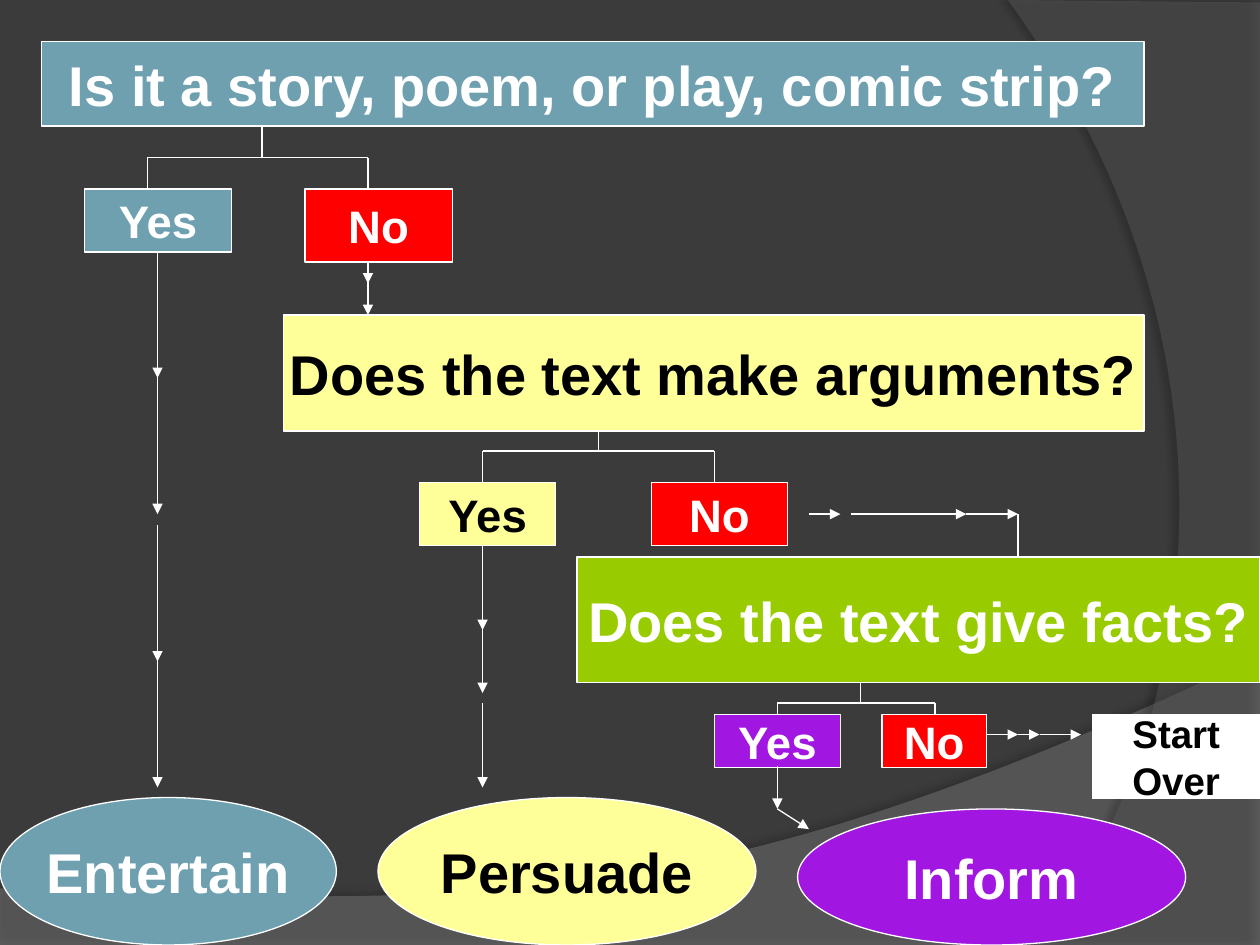
from dataclasses import dataclass

import pptx
import pptx.dml.color
import pptx.enum.shapes
import pptx.enum.text
import pptx.oxml
import pptx.oxml.ns
import pptx.util
from lxml import etree

Inches = pptx.util.Inches
RGBColor = pptx.dml.color.RGBColor
ShapeKind = pptx.enum.shapes.MSO_SHAPE
Point = tuple[float, float]

BACKGROUND = RGBColor(0x3B, 0x3B, 0x3B)
LOWER_GRAY = RGBColor(0x7F, 0x7F, 0x7F)
RIGHT_GRAY = RGBColor(0x5E, 0x5E, 0x5E)
WHITE = RGBColor(0xFF, 0xFF, 0xFF)
BLACK = RGBColor(0x00, 0x00, 0x00)
BLUE = RGBColor(0x6E, 0xA0, 0xB0)
RED = RGBColor(0xFF, 0x00, 0x00)
YELLOW = RGBColor(0xFF, 0xFF, 0x99)
GREEN = RGBColor(0x99, 0xCC, 0x00)
PURPLE = RGBColor(0xA1, 0x16, 0xE0)


@dataclass
class Node:
    text: str
    left: float
    top: float
    width: float
    height: float
    fill: RGBColor
    color: RGBColor = WHITE
    size: int = 32
    kind: ShapeKind = ShapeKind.RECTANGLE


@dataclass
class Fork:
    trunk: float
    top: float
    bar: float
    bottom: float
    branches: tuple[float, float]


@dataclass
class Swoosh:
    corners: list[Point]
    curve: tuple[Point, Point, Point, Point]
    fill: RGBColor
    opacity: int
    shadow_opacity: int
    shadow_distance: float
    shadow_angle: int


SWOOSHES = [
    Swoosh([(0, 7.05), (0, 7.5), (10, 7.5)],
           ((10, 5.2), (5.59, 7.29), (3.91, 7.19), (0, 7.05)),
           LOWER_GRAY, 45, 35, 3.5, 270),
    Swoosh([(10, 0.02), (10, 7.5)],
           ((8.21, 7.5), (9.35, 6.19), (10.18, 3), (8, 0)),
           RIGHT_GRAY, 40, 45, 4, 180),
]

NODES = [
    Node("Is it a story, poem, or play, comic strip?", 0.33, 0.33, 8.75, 0.67, BLUE),
    Node("Does the text make arguments?", 2.25, 2.5, 6.83, 0.92, YELLOW, BLACK),
    Node("Does the text give facts?", 4.58, 4.42, 5.42, 1, GREEN),
    Node("Yes", 0.67, 1.5, 1.17, 0.5, BLUE, size=26),
    Node("No", 2.42, 1.5, 1.17, 0.58, RED, size=26),
    Node("Yes", 3.33, 3.83, 1.08, 0.5, YELLOW, BLACK, 26),
    Node("No", 5.17, 3.83, 1.08, 0.5, RED, size=26),
    Node("Yes", 5.67, 5.67, 1, 0.42, PURPLE, size=26),
    Node("No", 7, 5.67, 0.83, 0.42, RED, size=26),
    Node("Start\nOver", 8.67, 5.67, 1.33, 0.67, WHITE, BLACK, 22),
    Node("Entertain", 0, 6.33, 2.67, 1.17, BLUE, kind=ShapeKind.OVAL),
    Node("Persuade", 3, 6.33, 3, 1.17, YELLOW, BLACK, kind=ShapeKind.OVAL),
    Node("Inform", 6.33, 6.42, 3.08, 1.08, PURPLE, kind=ShapeKind.OVAL),
]

FORKS = [
    Fork(2.08, 1, 1.25, 1.5, (1.17, 2.92)),
    Fork(4.75, 3.42, 3.58, 3.83, (3.83, 5.67)),
    Fork(6.83, 5.42, 5.58, 5.67, (6.17, 7.42)),
]

DOWN_ARROWS = {
    1.25: [(2, 4.08), (2.75, 3), (4.17, 6.25), (4.75, 5.25)],
    2.92: [(2.08, 2.5), (2.17, 2.25)],
    3.83: [(4.33, 5.5), (4.58, 5), (5.58, 6.25)],
    6.17: [(6.08, 6.42)],
}
RIGHT_ARROWS = {
    4.08: [(6.42, 6.67), (6.75, 7.67), (7.67, 8.08)],
    5.83: [(7.83, 8.08), (8.08, 8.25), (8.25, 8.58)],
}


def bezier(curve: tuple[Point, Point, Point, Point], steps: int = 60) -> list[Point]:
    points = []
    for step in range(steps + 1):
        t = step / steps
        weights = ((1 - t) ** 3, 3 * t * (1 - t) ** 2, 3 * t * t * (1 - t), t ** 3)
        points.append((sum(w * p[0] for w, p in zip(weights, curve)),
                       sum(w * p[1] for w, p in zip(weights, curve))))
    return points


def draw_swoosh(page, swoosh: Swoosh) -> None:
    outline = [(Inches(x), Inches(y)) for x, y in swoosh.corners + bezier(swoosh.curve)]
    builder = page.shapes.build_freeform(*outline[0])
    builder.add_line_segments(outline[1:], close=True)
    shape = builder.convert_to_shape()
    shape.fill.solid()
    shape.fill.fore_color.rgb = swoosh.fill
    shape.line.fill.background()
    properties = shape.element.spPr
    fill_color = properties.find(pptx.oxml.ns.qn("a:solidFill"))[0]
    etree.SubElement(fill_color, pptx.oxml.ns.qn("a:alpha"), val=str(swoosh.opacity * 1000))
    properties.append(pptx.oxml.parse_xml(
        f'<a:effectLst {pptx.oxml.ns.nsdecls("a")}>'
        f'<a:outerShdw blurRad="{pptx.util.Pt(4)}" dist="{pptx.util.Pt(swoosh.shadow_distance)}" '
        f'dir="{swoosh.shadow_angle * 60000}" algn="ctr" rotWithShape="0">'
        f'<a:srgbClr val="{BLACK}"><a:alpha val="{swoosh.shadow_opacity * 1000}"/></a:srgbClr>'
        '</a:outerShdw></a:effectLst>'))


def draw_node(page, node: Node) -> None:
    box = page.shapes.add_shape(node.kind, Inches(node.left), Inches(node.top),
                                Inches(node.width), Inches(node.height))
    box.shadow.inherit = False
    box.fill.solid()
    box.fill.fore_color.rgb = node.fill
    box.line.color.rgb = WHITE
    box.line.width = pptx.util.Pt(0.75)
    frame = box.text_frame
    frame.word_wrap = False
    frame.vertical_anchor = pptx.enum.text.MSO_ANCHOR.MIDDLE
    frame.text = node.text
    for para in frame.paragraphs:
        para.alignment = pptx.enum.text.PP_ALIGN.CENTER
        para.font.name = "Arial"
        para.font.size = pptx.util.Pt(node.size)
        para.font.bold = True
        para.font.color.rgb = node.color


def draw_line(page, start: Point, end: Point, arrow: bool = False) -> None:
    line = page.shapes.add_connector(pptx.enum.shapes.MSO_CONNECTOR.STRAIGHT,
                                     *map(Inches, start + end))
    line.line.color.rgb = WHITE
    line.line.width = pptx.util.Pt(0.75)
    if arrow:
        etree.SubElement(line.line._get_or_add_ln(), pptx.oxml.ns.qn("a:tailEnd"), type="triangle")
    etree.SubElement(line._element.spPr, pptx.oxml.ns.qn("a:effectLst"))


def draw_fork(page, fork: Fork) -> None:
    draw_line(page, (fork.trunk, fork.top), (fork.trunk, fork.bar))
    draw_line(page, (fork.branches[0], fork.bar), (fork.branches[1], fork.bar))
    for x in fork.branches:
        draw_line(page, (x, fork.bar), (x, fork.bottom))


def main() -> None:
    deck = pptx.Presentation()
    deck.slide_width, deck.slide_height = Inches(10), Inches(7.5)
    page = deck.slides.add_slide(deck.slide_layouts[6])
    page.background.fill.solid()
    page.background.fill.fore_color.rgb = BACKGROUND
    for swoosh in SWOOSHES:
        draw_swoosh(page, swoosh)
    for node in NODES:
        draw_node(page, node)
    for fork in FORKS:
        draw_fork(page, fork)
    for x, spans in DOWN_ARROWS.items():
        for top, bottom in spans:
            draw_line(page, (x, top), (x, bottom), arrow=True)
    for y, spans in RIGHT_ARROWS.items():
        for left, right in spans:
            draw_line(page, (left, y), (right, y), arrow=True)
    draw_line(page, (8.08, 4.08), (8.08, 4.42))
    draw_line(page, (6.17, 6.42), (6.42, 6.58), arrow=True)
    deck.save("out.pptx")


if __name__ == "__main__":
    main()
